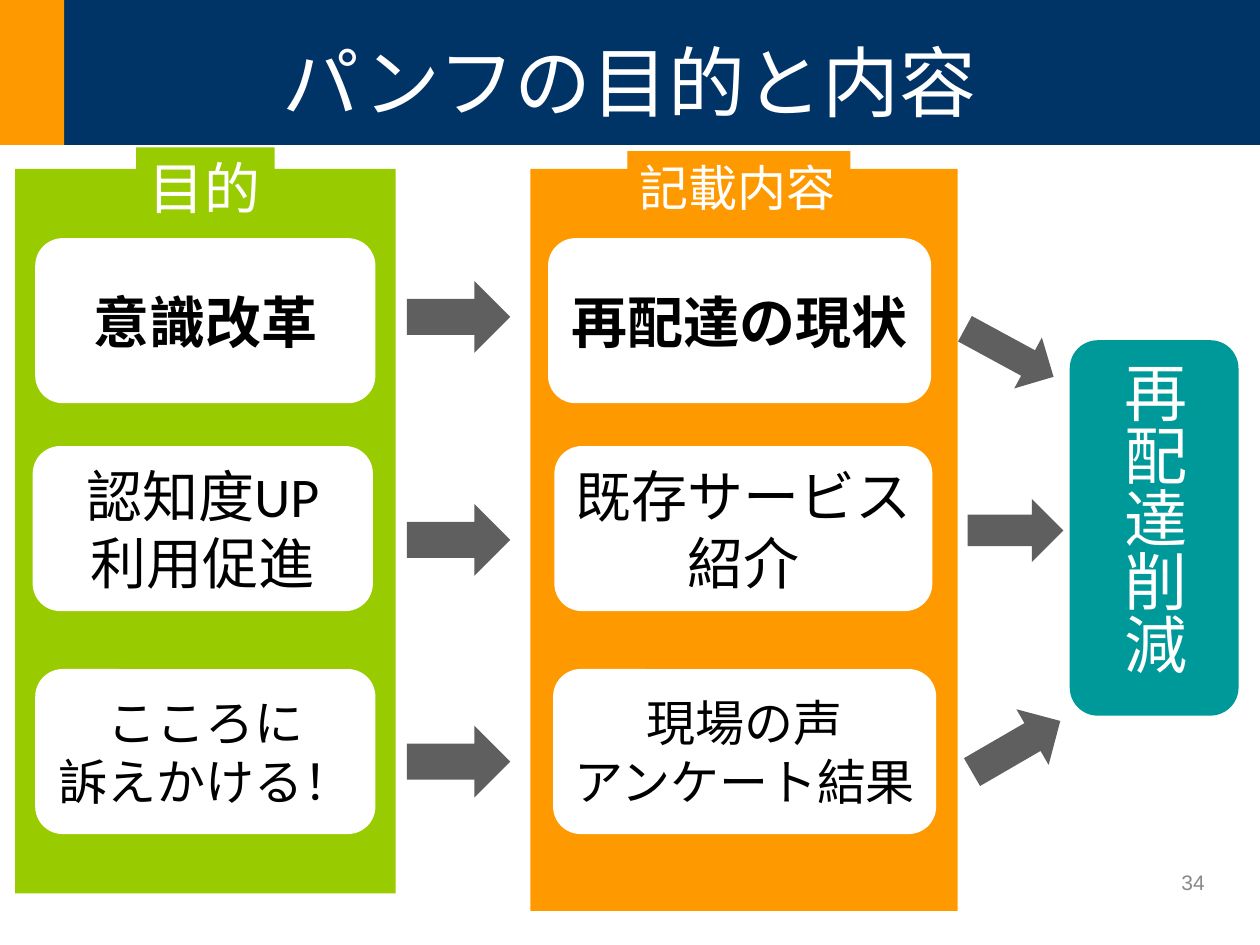
from dataclasses import dataclass

from pptx import Presentation
from pptx.dml.color import RGBColor
from pptx.enum import shapes, text
from pptx.util import Inches, Pt

KIND = shapes.MSO_SHAPE
ALIGN = text.PP_ALIGN
MID = text.MSO_ANCHOR.MIDDLE


@dataclass(frozen=True)
class Theme:
    navy: str = "003366"
    orange: str = "FF9900"
    green: str = "99CC00"
    teal: str = "009999"
    gray: str = "5F5F5F"
    pale: str = "898989"
    white: str = "FFFFFF"
    black: str = "000000"
    head: int = 44
    goal: int = 36
    big: int = 32
    mid: int = 28
    small: int = 12
    main: str = "Calibri"
    side: str = "Arial"


T = Theme()

# Rows: card top, arrow top, type size, bold, purpose, content
ROWS = [
    (1.89, 2.23, T.big, True, ["意識改革"], ["再配達の現状"]),
    (3.54, 4.0, T.big, False, ["認知度UP", "利用促進"], ["既存サービス", "紹介"]),
    (5.31, 5.76, T.mid, False, ["こころに", "訴えかける！"],
     ["現場の声", "アンケート結果"]),
]
# Left edge and width of the cards in each row
LEFT = [(0.28, 2.7), (0.26, 2.7), (0.28, 2.7)]
RIGHT = [(4.35, 3.04), (4.4, 3.0), (4.39, 3.04)]
# Arrows towards the goal: place and turn
TURNS = [
    ((7.61, 2.57, 0.8, 0.46), 28.5),
    ((7.68, 3.96, 0.76, 0.5), 0),
    ((7.66, 5.67, 0.81, 0.51), 329.9),
]


def apply(item, form):
    for key, value in form.items():
        setattr(item, key, value)


def write(shape, lines, size, color, font=T.main, bold=False,
          align=ALIGN.CENTER, **frame):
    box = shape.text_frame
    apply(box, {"word_wrap": True, "vertical_anchor": MID, **frame})
    box.text = "\n".join(lines)
    for para in box.paragraphs:
        para.alignment = align
        apply(para.font, {"size": Pt(size), "name": font, "bold": bold})
        para.font.color.rgb = RGBColor.from_string(color)


def block(slide, kind, spot, fill, turn=0):
    shape = slide.shapes.add_shape(kind, *map(Inches, spot))
    shape.fill.solid()
    shape.fill.fore_color.rgb = RGBColor.from_string(fill)
    shape.line.fill.background()
    shape.shadow.inherit = False
    shape.rotation = turn
    return shape


def card(slide, spot, lines, size, bold):
    shape = block(slide, KIND.ROUNDED_RECTANGLE, spot, T.white)
    write(shape, lines, size, T.black, bold=bold)


def label(slide, spot, words, size, fill):
    shape = block(slide, KIND.RECTANGLE, spot, fill)
    write(shape, [words], size, T.white, T.side, align=ALIGN.LEFT,
          word_wrap=False, vertical_anchor=text.MSO_ANCHOR.TOP)


def header(slide, words):
    block(slide, KIND.RECTANGLE, (0, 0, 10, 1.15), T.navy)
    block(slide, KIND.RECTANGLE, (0, 0, 0.51, 1.15), T.orange)
    title = slide.shapes.title
    spot = map(Inches, (0.75, 0.13, 8.5, 1.02))
    apply(title, dict(zip(("left", "top", "width", "height"), spot)))
    write(title, [words], T.head, T.white)
    # Bring the title in front of the band
    slide.shapes._spTree.append(title._element)


def number(slide, words):
    spot = map(Inches, (7.33, 6.8, 2.33, 0.4))
    write(slide.shapes.add_textbox(*spot), [words], T.small, T.pale,
          T.side, align=ALIGN.RIGHT)


def goal(slide, words):
    shape = block(slide, KIND.ROUNDED_RECTANGLE, (8.49, 2.7, 1.34, 2.98), T.teal)
    write(shape, [words], T.goal, T.white)
    shape.text_frame._txBody.bodyPr.set("vert", "eaVert")


def main():
    deck = Presentation()
    apply(deck, {"slide_width": Inches(10), "slide_height": Inches(7.5)})
    slide = deck.slides.add_slide(deck.slide_layouts[5])

    # Column panels and header
    block(slide, KIND.RECTANGLE, (4.21, 1.34, 3.39, 5.89), T.orange)
    block(slide, KIND.RECTANGLE, (0.12, 1.34, 3.02, 5.75), T.green)
    header(slide, "パンフの目的と内容")
    number(slide, "34")

    # Purpose, arrow and content in each row
    for row, (x1, w1), (x2, w2) in zip(ROWS, LEFT, RIGHT):
        top, mark, size, bold, aim, body = row
        card(slide, (x1, top, w1, 1.31), aim, size, bold)
        block(slide, KIND.RIGHT_ARROW, (3.23, mark, 0.82, 0.57), T.gray)
        card(slide, (x2, top, w2, 1.31), body, size, bold)

    # Goal and the arrows that lead to it
    goal(slide, "再配達削減")
    for spot, turn in TURNS:
        block(slide, KIND.RIGHT_ARROW, spot, T.gray, turn)

    # Column labels
    label(slide, (1.08, 1.17, 1.1, 0.64), "目的", T.big, T.green)
    label(slide, (4.98, 1.2, 1.77, 0.57), "記載内容", T.mid, T.orange)

    deck.save("out.pptx")


if __name__ == "__main__":
    main()
